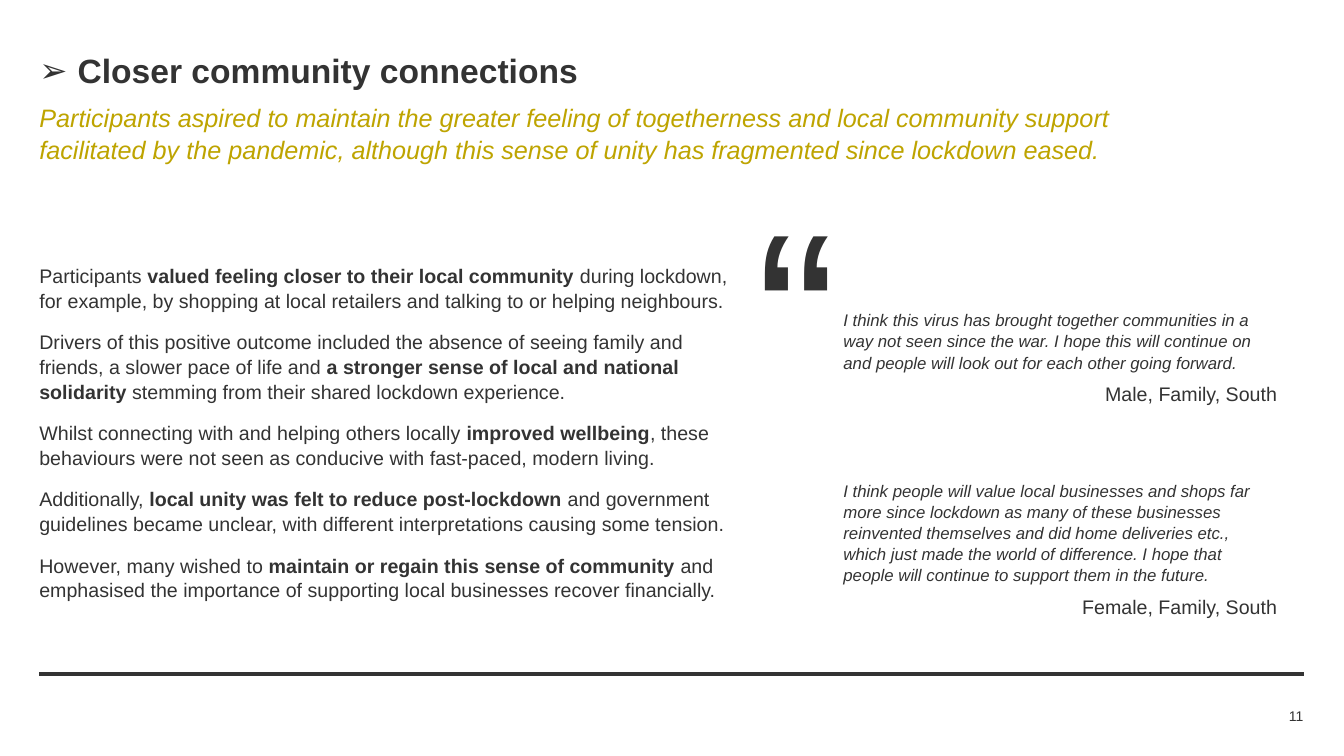
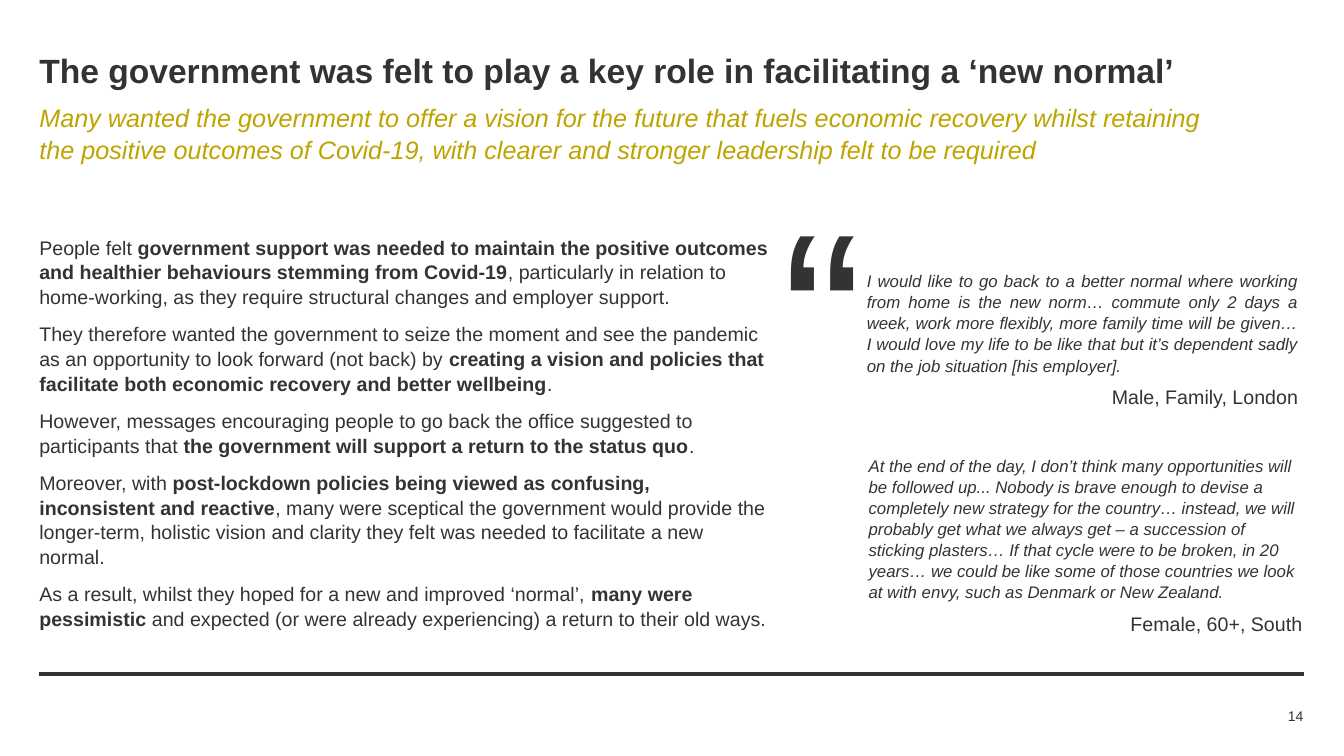
from dataclasses import dataclass

import pptx
import pptx.dml.color
import pptx.enum.shapes
import pptx.enum.text
import pptx.oxml.ns
import pptx.util
from lxml import etree

COLUMNS, ROWS = 160, 90
CELL = pptx.util.Inches(1) / 12
LINE_SPACING = 1.05
COLORS = {"ink": "333333", "lead": "BEA400", "paper": "FFFFFF"}
FORMATS = {
    "title": {"size": 24, "bold": True, "color": "ink"},
    "lead": {"size": 18, "italic": True, "color": "lead"},
    "body": {"size": 14, "color": "ink"},
    "quote": {"size": 12, "italic": True, "color": "ink"},
    "speaker": {"size": 14, "color": "ink"},
    "mark": {"size": 173, "color": "ink"},
    "number": {"size": 10, "color": "ink"},
}
ALIGN = pptx.enum.text.PP_ALIGN
ANCHOR = pptx.enum.text.MSO_ANCHOR


@dataclass
class Box:
    """A rectangle in grid columns and rows."""
    left: float
    top: float
    width: float
    height: float

    def inner(self, left, top, width, height):
        return Box(self.left + left, self.top + top, width, height)

    def emu(self):
        return [round(value * CELL)
                for value in (self.left, self.top, self.width, self.height)]


PAGE = Box(0, 0, COLUMNS, ROWS)
CONTENT = PAGE.inner(4.68, 5.76, 150.6, 74.52)

SLIDES = [
    {
        "number": "11",
        "title": "Closer community connections",
        "arrow": True,
        "lead": "Participants aspired to maintain the greater feeling of togetherness and local "
                "community support facilitated by the pandemic, although this sense of unity has "
                "fragmented since lockdown eased.",
        "body_width": 83.04,
        "gap": 12,
        "body": [
            "Participants **valued feeling closer to their local community** during lockdown, for "
            "example, by shopping at local retailers and talking to or helping neighbours.",
            "Drivers of this positive outcome included the absence of seeing family and friends, a "
            "slower pace of life and **a stronger sense of local and national solidarity **stemming "
            "from their shared lockdown experience.",
            "Whilst connecting with and helping others locally **improved wellbeing**, these "
            "behaviours were not seen as conducive with fast-paced, modern living.",
            "Additionally, **local unity was felt to reduce post-lockdown **and government "
            "guidelines became unclear, with different interpretations causing some tension.",
            "However, many wished to **maintain or regain this sense of community **and emphasised "
            "the importance of supporting local businesses recover financially.",
        ],
        "panel_left": 85.44,
        "quotes": [
            {"place": (8.16, 15.48, 55.92, 19.08), "align": ALIGN.LEFT,
             "text": "I think this virus has brought together communities in a way not seen since "
                     "the war. I hope this will continue on and people will look out for each "
                     "other going forward.",
             "speaker": "Male, Family, South"},
            {"place": (8.16, 38.28, 55.92, 19.08), "align": ALIGN.LEFT,
             "text": "I think people will value local businesses and shops far more since lockdown "
                     "as many of these businesses reinvented themselves and did home deliveries "
                     "etc., which just made the world of difference. I hope that people will "
                     "continue to support them in the future.",
             "speaker": "Female, Family, South"},
        ],
    },
    {
        "number": "14",
        "title": "The government was felt to play a key role in facilitating a ‘new normal’",
        "arrow": False,
        "lead": "Many wanted the government to offer a vision for the future that fuels economic "
                "recovery whilst retaining the positive outcomes of Covid-19, with clearer and "
                "stronger leadership felt to be required",
        "body_width": 87,
        "gap": 9,
        "body": [
            "People felt **government support was needed to maintain the positive outcomes and "
            "healthier behaviours stemming from Covid-19**, particularly in relation to "
            "home-working, as they require structural changes and employer support.",
            "They therefore wanted the government to seize the moment and see the pandemic as an "
            "opportunity to look forward (not back) by **creating a vision and policies that "
            "facilitate both economic recovery and better wellbeing**.",
            "However, messages encouraging people to go back the office suggested to participants "
            "that **the government will support a return to the status quo**.",
            "Moreover, with **post-lockdown policies being viewed as confusing, inconsistent and "
            "reactive**, many were sceptical the government would provide the longer-term, holistic "
            "vision and clarity they felt was needed to facilitate a new normal.",
            "As a result, whilst they hoped for a new and improved ‘normal’, **many were "
            "pessimistic** and expected (or were already experiencing) a return to their old ways.",
        ],
        "panel_left": 88.44,
        "quotes": [
            {"place": (7.8, 11.88, 55.92, 21.96), "align": ALIGN.JUSTIFY,
             "text": "I would like to go back to a better normal where working from home is the "
                     "new norm… commute only 2 days a week, work more flexibly, more family time "
                     "will be given… I would love my life to be like that but it’s dependent sadly "
                     "on the job situation [his employer].",
             "speaker": "Male, Family, London"},
            {"place": (8.16, 37.8, 55.92, 19.08), "align": ALIGN.LEFT,
             "text": "At the end of the day, I don’t think many opportunities will be followed "
                     "up... Nobody is brave enough to devise a completely new strategy for the "
                     "country… instead, we will probably get what we always get – a succession of "
                     "sticking plasters… If that cycle were to be broken, in 20 years… we could be "
                     "like some of those countries we look at with envy, such as Denmark or New "
                     "Zealand.",
             "speaker": "Female, 60+, South"},
        ],
    },
]


def color(name):
    return pptx.dml.color.RGBColor.from_string(COLORS[name])


def place(shape, box):
    for name, value in zip(("left", "top", "width", "height"), box.emu()):
        setattr(shape, name, value)


def prepare_frame(shape, anchor=ANCHOR.TOP, inset=True):
    frame = shape.text_frame
    frame.word_wrap = True
    frame.auto_size = pptx.enum.text.MSO_AUTO_SIZE.NONE
    frame.vertical_anchor = anchor
    if not inset:
        for side in ("left", "top", "right", "bottom"):
            setattr(frame, f"margin_{side}", 0)
    return frame


def set_bullet(paragraph, character=None, indent=0):
    """Give the paragraph a hanging bullet, or none without a character."""
    properties = paragraph._p.get_or_add_pPr()
    hang = pptx.util.Inches(indent)
    properties.set("marL", str(hang))
    properties.set("indent", str(-hang))
    if character:
        font = etree.SubElement(properties, pptx.oxml.ns.qn("a:buFont"))
        font.set("typeface", "Arial")
        etree.SubElement(properties, pptx.oxml.ns.qn("a:buChar")).set("char", character)
    else:
        etree.SubElement(properties, pptx.oxml.ns.qn("a:buNone"))


def write(frame, texts, style, gap=0, align=ALIGN.LEFT):
    """Add paragraphs to a frame; ** switches bold on and off."""
    for text in texts:
        first = not frame.text
        paragraph = frame.paragraphs[0] if first else frame.add_paragraph()
        layout = {"alignment": align, "line_spacing": LINE_SPACING, "space_after": 0,
                  "space_before": pptx.util.Pt(0 if first else gap)}
        for name, value in layout.items():
            setattr(paragraph, name, value)
        for index, part in enumerate(text.split("**")):
            run = paragraph.add_run()
            run.text = part
            settings = {"name": "Arial", "bold": index % 2 == 1, "italic": False,
                        **FORMATS[style]}
            run.font.color.rgb = color(settings.pop("color"))
            settings["size"] = pptx.util.Pt(settings["size"])
            for name, value in settings.items():
                setattr(run.font, name, value)


def fill_placeholder(shape, box, texts, style, anchor=ANCHOR.TOP, gap=0, bullet=None):
    place(shape, box)
    frame = prepare_frame(shape, anchor, inset=False)
    write(frame, texts, style, gap)
    for paragraph in frame.paragraphs:
        set_bullet(paragraph, bullet, 0.38 if bullet else 0)


def add_text(slide, box, text, style, anchor=ANCHOR.TOP, align=ALIGN.LEFT):
    shape = slide.shapes.add_textbox(*box.emu())
    write(prepare_frame(shape, anchor, inset=False), [text], style, align=align)


def add_footer(slide, box, number):
    """Draw the rule along the bottom of the box and the slide number below it."""
    left, top, width, height = box.emu()
    rule = slide.shapes.add_connector(pptx.enum.shapes.MSO_CONNECTOR.STRAIGHT,
                                      left, top + height, left + width, top + height)
    rule.line.width = pptx.util.Pt(3)
    rule.line.color.rgb = color("ink")
    etree.SubElement(rule._element.spPr, pptx.oxml.ns.qn("a:effectLst"))
    add_text(slide, box.inner(box.width - 12.84, box.height + 3.6, 12.72, 2.64),
             number, "number", ANCHOR.MIDDLE, ALIGN.RIGHT)


def add_quote(slide, box, quote):
    callout = slide.shapes.add_shape(
        pptx.enum.shapes.MSO_SHAPE.ROUNDED_RECTANGULAR_CALLOUT, *box.emu())
    for index, value in enumerate((-0.54, -0.04, 0.17)):
        callout.adjustments[index] = value
    callout.shadow.inherit = False
    callout.fill.solid()
    callout.fill.fore_color.rgb = color("paper")
    callout.line.fill.background()
    frame = prepare_frame(callout, ANCHOR.MIDDLE)
    write(frame, [quote["text"]], "quote", align=quote["align"])
    write(frame, [quote["speaker"]], "speaker", align=ALIGN.RIGHT)
    for paragraph in frame.paragraphs:
        paragraph.space_after = pptx.util.Pt(6)


def add_quote_panel(slide, box, quotes):
    for quote in quotes:
        add_quote(slide, box.inner(*quote["place"]), quote)
    add_text(slide, box.inner(0, 0, 27, 34.92), "“", "mark")


def add_finding_slide(presentation, content, box):
    slide = presentation.slides.add_slide(presentation.slide_layouts.get_by_name("Two Content"))
    lead, body = list(slide.placeholders)[1:]
    fill_placeholder(slide.shapes.title, box.inner(0, 0, box.width, 5.28), [content["title"]],
                     "title", bullet="➢" if content["arrow"] else None)
    fill_placeholder(lead, box.inner(0, 6.24, 139.2, 9.36), [content["lead"]], "lead")
    fill_placeholder(body, box.inner(0, 19.44, content["body_width"], 52.56), content["body"],
                     "body", ANCHOR.MIDDLE, content["gap"])
    panel_left = content["panel_left"]
    add_quote_panel(slide, box.inner(panel_left, 11.76, box.width - panel_left, 62.76),
                    content["quotes"])
    add_footer(slide, box, content["number"])


def main():
    presentation = pptx.Presentation()
    presentation.slide_width = round(COLUMNS * CELL)
    presentation.slide_height = round(ROWS * CELL)
    for content in SLIDES:
        add_finding_slide(presentation, content, CONTENT)
    presentation.save("out.pptx")


if __name__ == "__main__":
    main()
